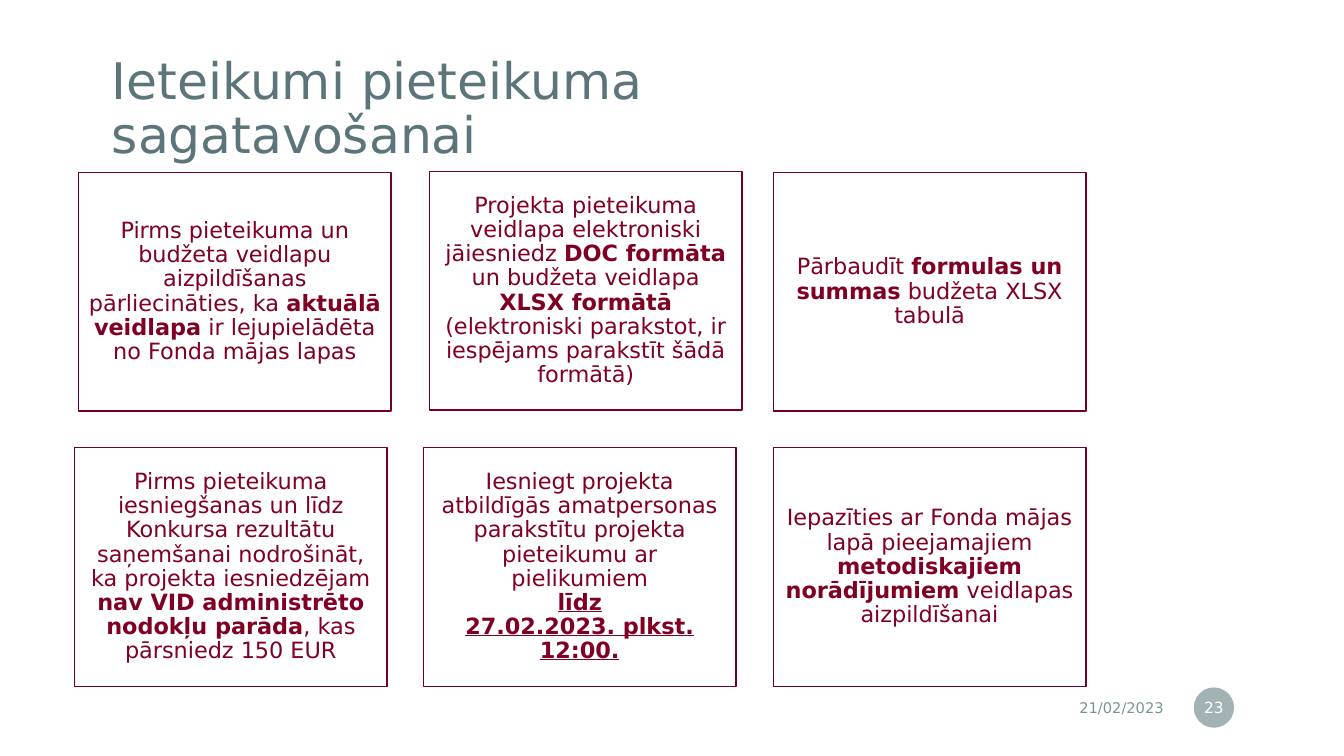
import pptx
import pptx.dml.color
import pptx.enum.shapes
import pptx.enum.text
import pptx.oxml
import pptx.oxml.ns
import pptx.util

PX = 9144  # one px is a hundredth of an inch
ALIGN = pptx.enum.text.PP_ALIGN
SHAPE = pptx.enum.shapes.MSO_SHAPE


def colour(hex_text):
    return pptx.dml.color.RGBColor.from_string(hex_text)


def write(shape, text, size, ink, align=ALIGN.LEFT, inset=(10, 5), spacing=1.0,
          after=0, underline=False):
    """Fill a shape with text; parts between ** are bold, \n breaks the line."""
    frame = shape.text_frame
    frame.word_wrap = True
    frame.vertical_anchor = pptx.enum.text.MSO_ANCHOR.MIDDLE
    frame.margin_left = frame.margin_right = inset[0] * PX
    frame.margin_top = frame.margin_bottom = inset[1] * PX
    para = frame.paragraphs[0]
    para.alignment = align
    para.line_spacing = spacing
    para.space_after = pptx.util.Pt(after)
    for index, part in enumerate(text.split("**")):
        strong = index % 2 == 1
        for row, line in enumerate(part.split("\n")):
            if row:
                para.add_line_break()
            if not line:
                continue
            span = para.add_run()
            span.text = line
            span.font.name = Slide.FONT
            span.font.size = pptx.util.Pt(size)
            span.font.color.rgb = colour(ink)
            span.font.bold = strong
            span.font.underline = strong and underline


class Slide:
    FONT = "DejaVu Sans"
    TITLE, MUTED, WHITE = "5B757A", "7C9396", "FFFFFF"
    BORDER, BODY = "740021", "800024"

    def __init__(self, deck):
        self.page = deck.slides.add_slide(deck.slide_layouts[6])

    def label(self, left, top, width, height, text, **style):
        box = self.page.shapes.add_textbox(
            left * PX, top * PX, width * PX, height * PX)
        write(box, text, **style)

    def shape(self, kind, left, top, width, height, fill):
        shape = self.page.shapes.add_shape(
            kind, left * PX, top * PX, width * PX, height * PX)
        shape.shadow.inherit = False
        shape.fill.solid()
        shape.fill.fore_color.rgb = colour(fill)
        return shape

    def card(self, left, top, text, underline=False):
        card = self.shape(SHAPE.RECTANGLE, left, top, 310, 237, self.WHITE)
        card.line.color.rgb = colour(self.BORDER)
        card.line.width = pptx.util.Pt(1)
        write(card, text, size=16, ink=self.BODY, align=ALIGN.CENTER,
              inset=(7, 7), spacing=0.9, after=5.6, underline=underline)

    def badge(self, left, top, size, text):
        badge = self.shape(SHAPE.OVAL, left, top, size, size, self.MUTED)
        badge.line.fill.background()
        # 70 % opaque fill
        shade = badge.fill._xPr.find(".//" + pptx.oxml.ns.qn("a:srgbClr"))
        shade.append(pptx.oxml.parse_xml(
            "<a:alpha %s val='70000'/>" % pptx.oxml.ns.nsdecls("a")))
        write(badge, text, size=11, ink=self.WHITE, align=ALIGN.CENTER,
              inset=(2, 5))


CARDS = [
    (78, 171, "Pirms pieteikuma un budžeta veidlapu aizpildīšanas pārliecināties, ka "
              "**aktuālā veidlapa** ir lejupielādēta no Fonda mājas lapas"),
    (426, 170, "Projekta pieteikuma veidlapa elektroniski jāiesniedz **DOC formāta **"
               "un budžeta veidlapa **XLSX formātā** (elektroniski parakstot, ir "
               "iespējams parakstīt šādā formātā)"),
    (767, 171, "Pārbaudīt **formulas un summas** budžeta XLSX tabulā"),
    (74, 444, "Pirms pieteikuma iesniegšanas un līdz Konkursa rezultātu saņemšanai "
              "nodrošināt, ka projekta iesniedzējam **nav VID administrēto nodokļu "
              "parāda**, kas pārsniedz 150 EUR"),
    (420, 444, "Iesniegt projekta atbildīgās amatpersonas parakstītu projekta "
               "pieteikumu ar pielikumiem\n**līdz\n27.02.2023. plkst.\n12:00.**"),
    (767, 444, "Iepazīties ar Fonda mājas lapā pieejamajiem **metodiskajiem "
               "norādījumiem** veidlapas aizpildīšanai"),
]


def main():
    deck = pptx.Presentation()
    deck.slide_width, deck.slide_height = 1333 * PX, 750 * PX
    slide = Slide(deck)

    # Title
    slide.label(91, 48, 873, 123, "Ieteikumi pieteikuma sagatavošanai", size=36,
                ink=Slide.TITLE, inset=(20, 20), spacing=0.9)

    # Date and page number
    slide.label(863, 684, 301, 35, "21/02/2023", size=10.5, ink=Slide.MUTED,
                align=ALIGN.RIGHT)
    slide.badge(1184, 682, 40, "23")

    # Advice cards; only the deadline is underlined
    for left, top, text in CARDS:
        slide.card(left, top, text, underline="plkst." in text)

    deck.save("out.pptx")


if __name__ == "__main__":
    main()
